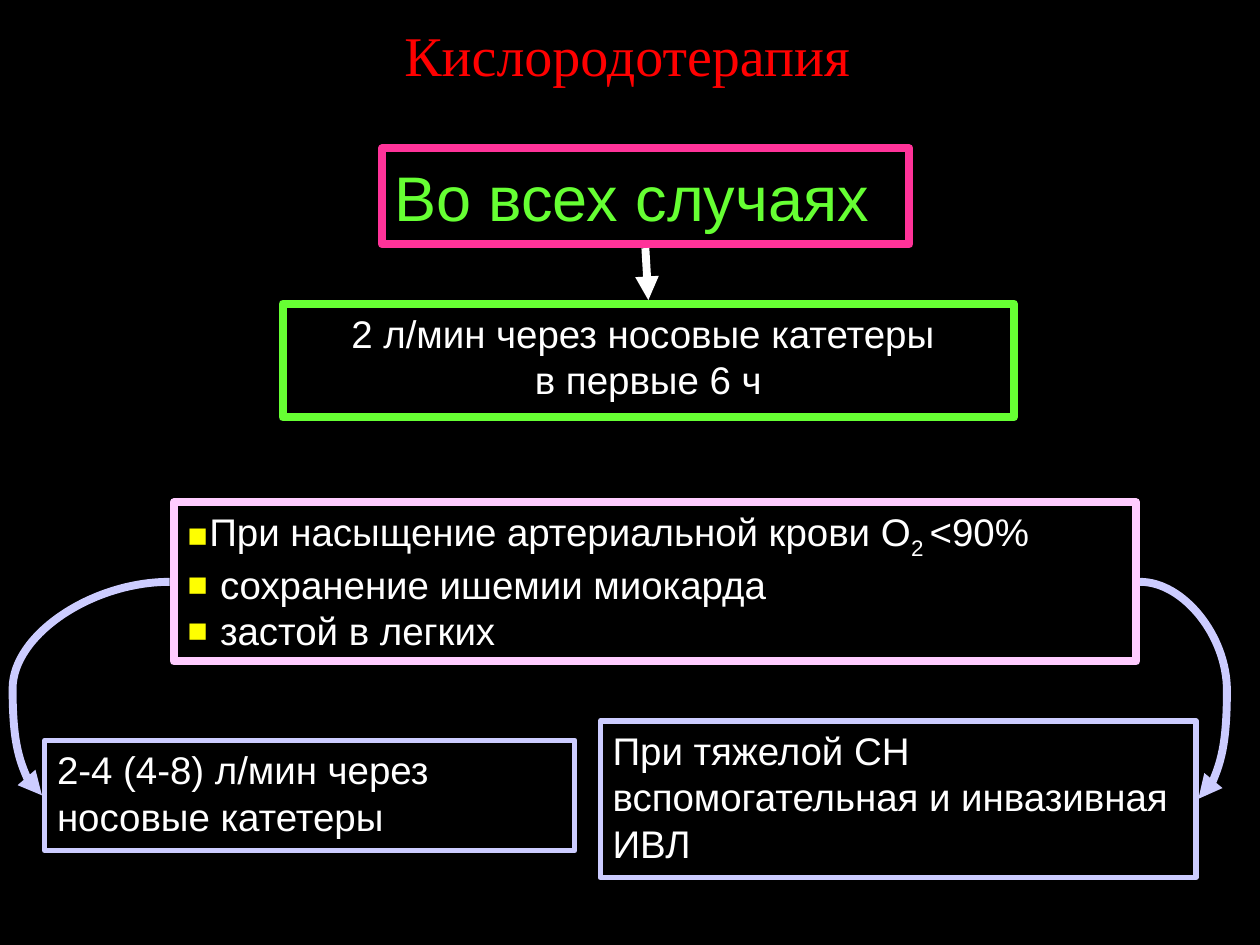
import pptx
import pptx.dml.color
import pptx.enum.shapes
import pptx.enum.text
import pptx.oxml.ns
import pptx.util
from dataclasses import dataclass
from lxml import etree

Pt = pptx.util.Pt
ALIGN = pptx.enum.text.PP_ALIGN
ANCHOR = pptx.enum.text.MSO_ANCHOR
CONNECTOR = pptx.enum.shapes.MSO_CONNECTOR


@dataclass(frozen=True)
class Theme:
    background: str = "000000"
    text: str = "FFFFFF"
    red: str = "FF0000"
    green: str = "66FF33"
    pink: str = "FF3399"
    rose: str = "FFCCFF"
    lavender: str = "CCCCFF"
    yellow: str = "FFFF00"
    title_font: str = "Times New Roman"
    body_font: str = "Arial"
    title_size: float = 32
    heading_size: float = 36
    body_size: float = 22
    thick: float = 4.5
    thin: float = 3


def rgb(value):
    return pptx.dml.color.RGBColor.from_string(value)


def add_element(parent, tag, **attributes):
    element = etree.SubElement(parent, pptx.oxml.ns.qn(tag))
    for name, value in attributes.items():
        element.set(name, str(value))
    return element


def write_text(paragraph, text, *, font, size, color, align=ALIGN.LEFT, baseline=0):
    paragraph.alignment = align
    run = paragraph.add_run()
    run.text = text
    run.font.name = font
    run.font.size = Pt(size)
    run.font.bold = False
    run.font.color.rgb = rgb(color)
    if baseline:
        run.font._element.set("baseline", str(baseline * 1000))


class SlideBuilder:
    def __init__(self, slide, theme):
        self.slide = slide
        self.theme = theme
        slide.background.fill.solid()
        slide.background.fill.fore_color.rgb = rgb(theme.background)

    def title(self, text, left, top, width, height):
        shape = self.slide.shapes.title
        shape.left, shape.top, shape.width, shape.height = map(Pt, (left, top, width, height))
        frame = shape.text_frame
        frame.word_wrap = True
        frame.vertical_anchor = ANCHOR.MIDDLE
        write_text(frame.paragraphs[0], text, font=self.theme.title_font,
                   size=self.theme.title_size, color=self.theme.red, align=ALIGN.CENTER)

    def box(self, lines, left, top, width, height, *, border, weight, size=None,
            color=None, align=ALIGN.LEFT, anchor=ANCHOR.TOP, bullets=False):
        shape = self.slide.shapes.add_shape(
            pptx.enum.shapes.MSO_SHAPE.RECTANGLE, *map(Pt, (left, top, width, height)))
        shape.shadow.inherit = False
        shape.fill.background()
        shape.line.color.rgb = rgb(border)
        shape.line.width = Pt(weight)
        frame = shape.text_frame
        frame.word_wrap = True
        frame.vertical_anchor = anchor
        for index, parts in enumerate(lines):
            paragraph = frame.add_paragraph() if index else frame.paragraphs[0]
            for text, baseline in parts:
                write_text(paragraph, text, font=self.theme.body_font,
                           size=size or self.theme.body_size,
                           color=color or self.theme.text, align=align, baseline=baseline)
            if bullets:
                self.bullet(paragraph)
        return shape

    def bullet(self, paragraph):
        properties = paragraph._p.get_or_add_pPr()
        add_element(add_element(properties, "a:buClr"), "a:srgbClr", val=self.theme.yellow)
        add_element(properties, "a:buSzPct", val=170000)
        add_element(properties, "a:buFont", typeface=self.theme.body_font)
        add_element(properties, "a:buChar", char="▪")

    def arrow(self, start, end, color, *, kind=CONNECTOR.STRAIGHT, bend=None):
        connector = self.slide.shapes.add_connector(kind, *map(Pt, start + end))
        connector.line.color.rgb = rgb(color)
        connector.line.width = Pt(self.theme.thick)
        add_element(connector.line._get_or_add_ln(), "a:tailEnd", type="triangle")
        properties = connector._element.spPr
        add_element(properties, "a:effectLst")
        if bend is not None:
            guides = properties.find(pptx.oxml.ns.qn("a:prstGeom")).get_or_add_avLst()
            add_element(guides, "a:gd", name="adj1", fmla=f"val {round(bend * 100000)}")


def plain(*lines):
    return [[(line, 0)] for line in lines]


def main():
    theme = Theme()
    presentation = pptx.Presentation()
    presentation.slide_width, presentation.slide_height = Pt(720), Pt(540)
    builder = SlideBuilder(presentation.slides.add_slide(presentation.slide_layouts[5]), theme)

    builder.title("Кислородотерапия", 175.5, 8, 366, 46)
    conditions = [[("При насыщение артериальной крови O", 0), ("2 ", -25), ("<90%", 0)]]
    conditions += plain(" сохранение ишемии миокарда", " застой в легких")
    builder.box(conditions, 99.3, 287, 550, 91, border=theme.rose,
                weight=theme.thick, bullets=True)
    builder.box(plain("Во всех случаях"), 218.2, 84.8, 301.5, 54.8, border=theme.pink,
                weight=theme.thick, size=theme.heading_size, color=theme.green,
                anchor=ANCHOR.MIDDLE)
    builder.box(plain("2-4 (4-8) л/мин через носовые катетеры"), 25.5, 423, 303, 63,
                border=theme.lavender, weight=theme.thin)
    builder.box(plain("При тяжелой СН вспомогательная и инвазивная ИВЛ "), 343, 412, 340.5, 89.5,
                border=theme.lavender, weight=theme.thin)
    builder.box(plain("2 л/мин через носовые катетеры ", "в первые 6 ч"), 161.5, 173.5, 418, 65,
                border=theme.green, weight=theme.thick, align=ALIGN.CENTER)

    builder.arrow((97, 332.5), (24, 454.5), theme.lavender, kind=CONNECTOR.CURVE, bend=1.23)
    builder.arrow((651.5, 332.5), (684.8, 456.5), theme.lavender, kind=CONNECTOR.CURVE, bend=1.49)
    builder.arrow((368.8, 141.8), (370.5, 171.5), theme.text)
    presentation.save("out.pptx")


if __name__ == "__main__":
    main()
